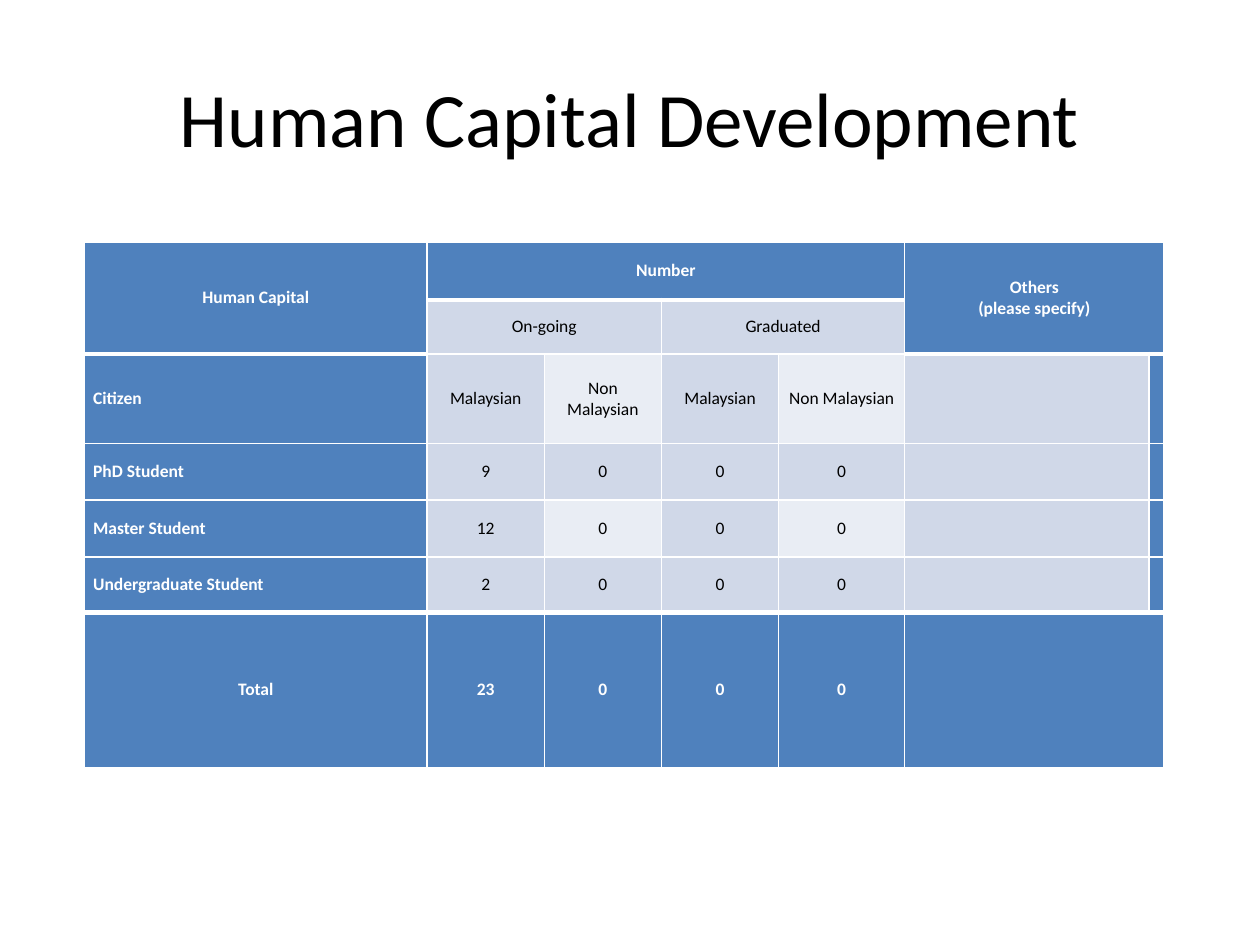
from dataclasses import dataclass

from lxml import etree
from pptx import Presentation
from pptx.dml.color import RGBColor
from pptx.enum.text import MSO_ANCHOR, PP_ALIGN
from pptx.oxml.ns import qn
from pptx.table import Table, _Cell
from pptx.text.text import TextFrame
from pptx.util import Inches, Pt

MID = MSO_ANCHOR.MIDDLE
LEFT, CENTER = PP_ALIGN.LEFT, PP_ALIGN.CENTER
BLUE, PALE, LIGHT = "4F81BD", "D0D8E8", "E9EDF4"
WHITE, BLACK = "FFFFFF", "000000"
THIN, THICK = 1, 3
COLS = (2.72, 0.93, 0.93, 0.93, 1, 1.94, 0.12)
ROWS = (0.46, 0.43, 0.71, 0.45, 0.45, 0.44, 1.23)
BODY = (
    ("Citizen", "Malaysian", "Non Malaysian", "Malaysian", "Non Malaysian"),
    ("PhD Student", "9", "0", "0", "0"),
    ("Master Student", "12", "0", "0", "0"),
    ("Undergraduate Student", "2", "0", "0", "0"),
)
TOTAL = ("Total", "23", "0", "0", "0")


@dataclass
class Block:
    row: int
    col: int
    text: str = ""
    fill: str = BLUE
    down: int = 1
    wide: int = 1
    align: PP_ALIGN = CENTER
    top: int = THIN
    low: int = THIN


def color(code: str) -> RGBColor:
    return RGBColor.from_string(code)


def write(frame: TextFrame, text: str, size: int, ink: str, bold: bool, align: PP_ALIGN) -> None:
    for i, line in enumerate(text.split("\n")):
        para = frame.add_paragraph() if i else frame.paragraphs[0]
        para.alignment = align
        run = para.add_run()
        run.text = line
        font = run.font
        font.name, font.size, font.bold = "Calibri", Pt(size), bold
        font.color.rgb = color(ink)


def edge(cell: _Cell, tag: str, width: int) -> None:
    props = cell._tc.get_or_add_tcPr()
    line = etree.SubElement(props, qn(tag), w=str(Pt(width)))
    fill = etree.SubElement(line, qn("a:solidFill"))
    etree.SubElement(fill, qn("a:srgbClr"), val=WHITE)


def draw(table: Table, block: Block) -> None:
    first = table.cell(block.row, block.col)
    last_row = block.row + block.down - 1
    last_col = block.col + block.wide - 1
    if last_row > block.row or last_col > block.col:
        first.merge(table.cell(last_row, last_col))
    for row in range(block.row, last_row + 1):
        for col in range(block.col, last_col + 1):
            cell = table.cell(row, col)
            edge(cell, "a:lnL", THIN)
            edge(cell, "a:lnR", THIN)
            edge(cell, "a:lnT", block.top)
            edge(cell, "a:lnB", block.low)
            cell.fill.solid()
            cell.fill.fore_color.rgb = color(block.fill)
            cell.margin_top = cell.margin_bottom = 0
            cell.margin_left = cell.margin_right = Inches(0.07 if block.text else 0)
    first.vertical_anchor = MID
    if block.text:
        head = block.fill == BLUE
        write(first.text_frame, block.text, 10, WHITE if head else BLACK, head, block.align)


def plan() -> list[Block]:
    blocks = [
        Block(0, 0, "Human Capital", down=2, low=THICK),
        Block(0, 1, "Number", wide=4, low=THICK),
        Block(0, 5, "Others\n(please specify)", down=2, wide=2, low=THICK),
        Block(1, 1, "On-going", PALE, wide=2, top=THICK),
        Block(1, 3, "Graduated", PALE, wide=2, top=THICK),
    ]
    for row, (name, *vals) in enumerate(BODY, 2):
        top = THICK if row == 2 else THIN
        low = THICK if row == 5 else THIN
        blocks.append(Block(row, 0, name, align=LEFT, top=top, low=low))
        for col, val in enumerate(vals, 1):
            fill = LIGHT if row % 2 == 0 and col % 2 == 0 else PALE
            blocks.append(Block(row, col, val, fill, low=low))
        blocks.append(Block(row, 5, fill=PALE, top=top, low=low))
        blocks.append(Block(row, 6, top=top, low=low))
    blocks += [Block(6, col, val, top=THICK) for col, val in enumerate(TOTAL)]
    blocks.append(Block(6, 5, wide=2, top=THICK))
    return blocks


def main() -> None:
    """Build the human capital slide."""
    deck = Presentation()
    deck.slide_width, deck.slide_height = Inches(10), Inches(7.5)
    slide = deck.slides.add_slide(deck.slide_layouts[6])
    title = slide.shapes.add_textbox(Inches(0.5), Inches(0.3), Inches(9), Inches(1.25))
    frame = title.text_frame
    frame.word_wrap, frame.vertical_anchor = True, MID
    write(frame, "Human Capital Development", 44, BLACK, False, CENTER)
    table = slide.shapes.add_table(
        len(ROWS), len(COLS), Inches(0.67), Inches(1.92), Inches(sum(COLS)), Inches(sum(ROWS))
    ).table
    for col, width in zip(table.columns, COLS):
        col.width = Inches(width)
    for row, height in zip(table.rows, ROWS):
        row.height = Inches(height)
    for block in plan():
        draw(table, block)
    deck.save("out.pptx")


if __name__ == "__main__":
    main()
